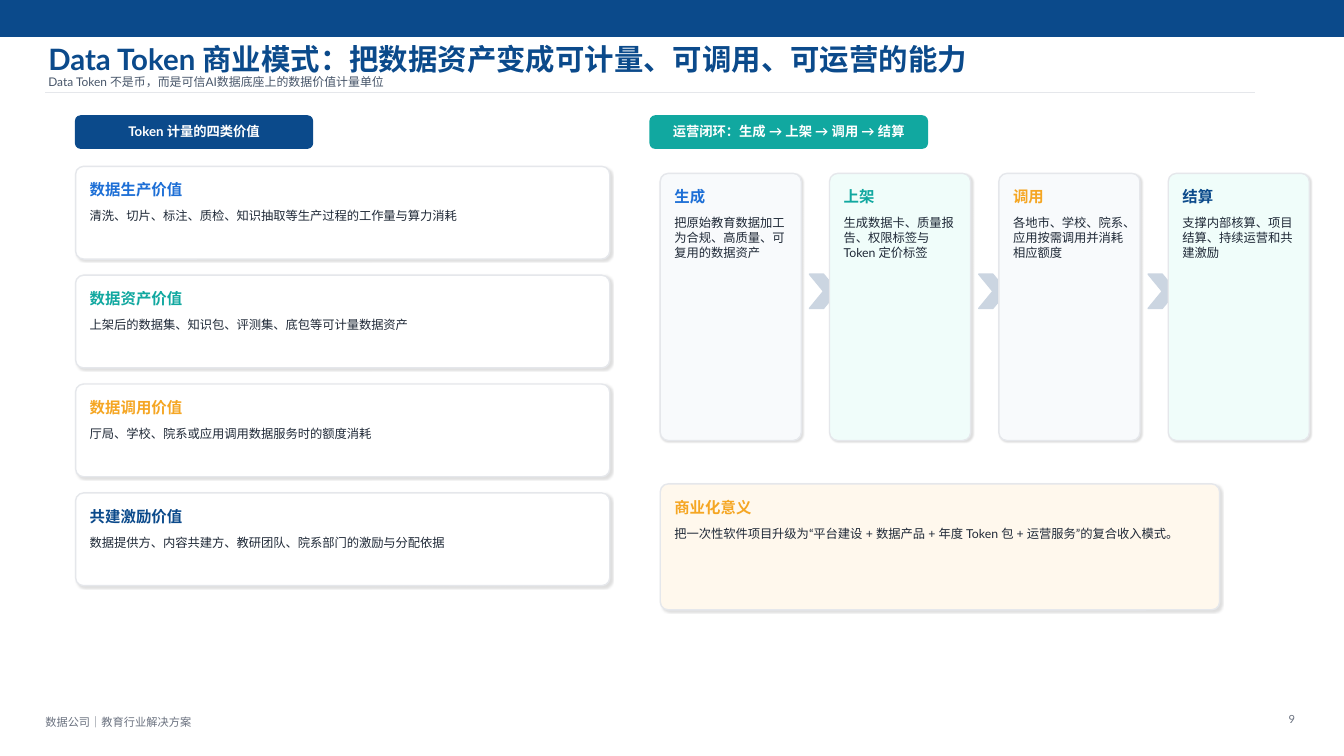
from dataclasses import dataclass

from lxml.etree import SubElement
from pptx import Presentation
from pptx.dml.color import RGBColor
from pptx.enum.shapes import MSO_CONNECTOR, MSO_SHAPE
from pptx.enum.text import MSO_ANCHOR, PP_ALIGN
from pptx.oxml.ns import qn
from pptx.util import Pt


@dataclass(frozen=True)
class Theme:
    font: str = "Lato"
    navy: str = "0B4A8B"
    blue: str = "1D6FD6"
    teal: str = "11A8A0"
    amber: str = "F5A623"
    white: str = "FFFFFF"
    border: str = "E5E7EB"
    slate: str = "475569"
    ink: str = "1F2937"
    gray: str = "6B7280"
    arrow: str = "CBD5E1"
    mist: str = "F8FAFC"
    mint: str = "F0FDFA"
    cream: str = "FFF8ED"
    title_size: float = 21
    subtitle_size: float = 8.5
    pill_size: float = 9.5
    heading_size: float = 11
    body_size: float = 8.8
    footer_size: float = 8


THEME = Theme()


def add_text(slide, text, left, top, width, height, size, color, bold=False,
             align=PP_ALIGN.LEFT, anchor=MSO_ANCHOR.MIDDLE):
    box = slide.shapes.add_textbox(Pt(left), Pt(top), Pt(width), Pt(height))
    frame = box.text_frame
    frame.word_wrap = True
    frame.margin_left = frame.margin_right = 0
    frame.margin_top = frame.margin_bottom = 0
    frame.vertical_anchor = anchor
    frame.text = text
    paragraph = frame.paragraphs[0]
    paragraph.alignment = align
    run = paragraph.runs[0]
    run.font.size = Pt(size)
    run.font.bold = bold
    run.font.color.rgb = RGBColor.from_string(color)
    run.font.name = THEME.font
    SubElement(run.font._element, qn("a:ea"), typeface=THEME.font)


def add_block(slide, kind, left, top, width, height, fill, line, radius=0):
    block = slide.shapes.add_shape(kind, Pt(left), Pt(top), Pt(width), Pt(height))
    block.shadow.inherit = False
    block.fill.solid()
    block.fill.fore_color.rgb = RGBColor.from_string(fill)
    block.line.color.rgb = RGBColor.from_string(line)
    block.line.width = Pt(1)
    if radius:
        block.adjustments[0] = radius / min(width, height)
    return block


def add_soft_shadow(block):
    effects = block._element.spPr.find(qn("a:effectLst"))
    shadow = SubElement(effects, qn("a:outerShdw"), blurRad=str(Pt(1.2)),
                        dist=str(Pt(1.2)), dir="2700000", algn="bl",
                        rotWithShape="0")
    color = SubElement(shadow, qn("a:srgbClr"), val="000000")
    SubElement(color, qn("a:alpha"), val="12000")


def add_card(slide, left, top, width, height, heading, body, accent, fill):
    card = add_block(slide, MSO_SHAPE.ROUNDED_RECTANGLE, left, top, width, height,
                     fill, THEME.border, radius=5.76)
    add_soft_shadow(card)
    inset = 10.08
    inner = width - 2 * inset
    add_text(slide, heading, left + inset, top + 8.64, inner, 15.84,
             THEME.heading_size, accent, bold=True)
    add_text(slide, body, left + inset, top + 30.24, inner, height - 37.44,
             THEME.body_size, THEME.ink, anchor=MSO_ANCHOR.TOP)


def add_pill(slide, left, width, label, fill):
    top = 82.8
    add_block(slide, MSO_SHAPE.ROUNDED_RECTANGLE, left, top, width, 23.04,
              fill, fill, radius=3.6)
    add_text(slide, label, left + 8.64, top + 4.32, width - 17.28, 12.96,
             THEME.pill_size, THEME.white, bold=True, align=PP_ALIGN.CENTER)


def add_rule(slide, left, right, y):
    rule = slide.shapes.add_connector(MSO_CONNECTOR.STRAIGHT,
                                      Pt(left), Pt(y), Pt(right), Pt(y))
    rule.line.color.rgb = RGBColor.from_string(THEME.border)
    rule.line.width = Pt(1)
    SubElement(rule._element.spPr, qn("a:effectLst"))


def add_frame(slide):
    add_block(slide, MSO_SHAPE.RECTANGLE, 0, 0, 960, 25.92, THEME.navy, THEME.navy)
    add_rule(slide, 32.4, 896.4, 66.24)
    add_text(slide, "Data Token 商业模式：把数据资产变成可计量、可调用、可运营的能力",
             34.56, 30.24, 705.6, 23.04, THEME.title_size, THEME.navy, bold=True)
    add_text(slide, "Data Token 不是币，而是可信AI数据底座上的数据价值计量单位",
             34.56, 51.84, 612, 12.96, THEME.subtitle_size, THEME.slate)
    add_text(slide, "数据公司｜教育行业解决方案", 32.4, 509.76, 273.6, 11.52,
             THEME.footer_size, THEME.gray)
    add_text(slide, "9", 903.6, 507.6, 21.6, 11.52,
             THEME.footer_size, THEME.gray, align=PP_ALIGN.RIGHT)


def add_values(slide):
    add_pill(slide, 54, 169.2, "Token 计量的四类价值", THEME.navy)
    values = [
        ("数据生产价值", "清洗、切片、标注、质检、知识抽取等生产过程的工作量与算力消耗", THEME.blue),
        ("数据资产价值", "上架后的数据集、知识包、评测集、底包等可计量数据资产", THEME.teal),
        ("数据调用价值", "厅局、学校、院系或应用调用数据服务时的额度消耗", THEME.amber),
        ("共建激励价值", "数据提供方、内容共建方、教研团队、院系部门的激励与分配依据", THEME.navy),
    ]
    for row, (heading, body, accent) in enumerate(values):
        add_card(slide, 54, 118.8 + row * 77.76, 381.6, 66.24,
                 heading, body, accent, THEME.white)


def add_loop(slide):
    add_pill(slide, 464.4, 198, "运营闭环：生成 → 上架 → 调用 → 结算", THEME.teal)
    steps = [
        ("生成", "把原始教育数据加工为合规、高质量、可复用的数据资产", THEME.blue, THEME.mist),
        ("上架", "生成数据卡、质量报告、权限标签与 Token 定价标签", THEME.teal, THEME.mint),
        ("调用", "各地市、学校、院系、应用按需调用并消耗相应额度", THEME.amber, THEME.mist),
        ("结算", "支撑内部核算、项目结算、持续运营和共建激励", THEME.navy, THEME.mint),
    ]
    for column, (heading, body, accent, fill) in enumerate(steps):
        left = 471.6 + column * 120.96
        if column:
            add_block(slide, MSO_SHAPE.CHEVRON, left - 14.4, 195.84, 20.16, 24.48,
                      THEME.arrow, THEME.arrow)
        add_card(slide, left, 123.84, 100.8, 190.8, heading, body, accent, fill)


def main():
    deck = Presentation()
    deck.slide_width, deck.slide_height = Pt(960), Pt(540)
    slide = deck.slides.add_slide(deck.slide_layouts[6])
    add_frame(slide)
    add_values(slide)
    add_loop(slide)
    add_card(slide, 471.6, 345.6, 399.6, 90, "商业化意义",
             "把一次性软件项目升级为“平台建设 + 数据产品 + 年度 Token 包 + 运营服务”的复合收入模式。",
             THEME.amber, THEME.cream)
    deck.save("out.pptx")


if __name__ == "__main__":
    main()
